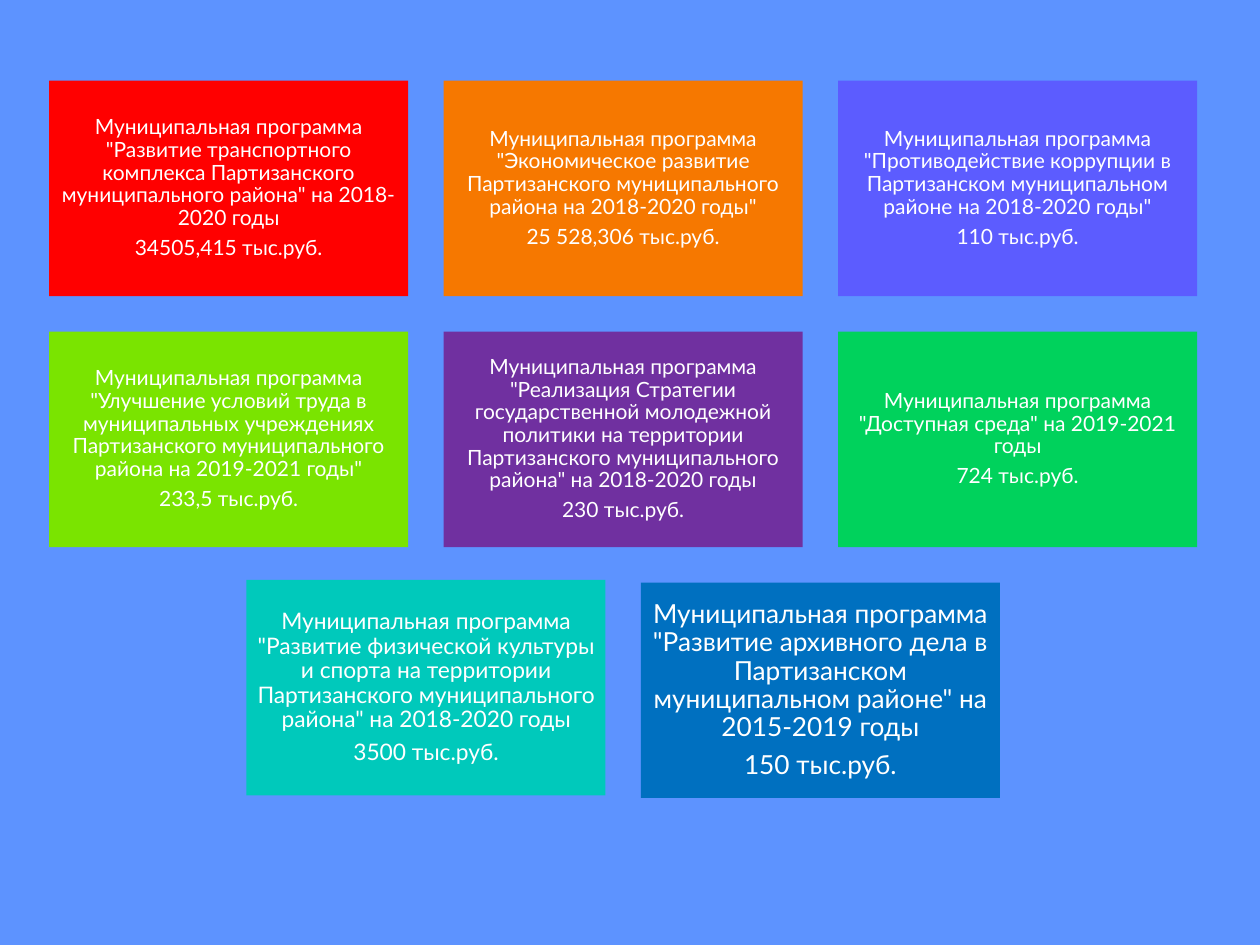
from pptx import Presentation
from pptx.dml.color import RGBColor
from pptx.enum.shapes import MSO_SHAPE
from pptx.enum.text import MSO_ANCHOR, PP_ALIGN
from pptx.util import Pt


def paint(fill, color):
    fill.solid()
    fill.fore_color.rgb = RGBColor.from_string(color)


WIDTH, HEIGHT = 205.2, 123.1
LEFT, TOP = 28.1, 46.1
STEP, DROP = 225.4, 143.4

cards = [
    ("FF0000", 12, '"Развитие транспортного комплекса Партизанского муниципального района" на 2018-2020 годы', "34505,415"),
    ("F67800", 12, '"Экономическое развитие Партизанского муниципального района на 2018-2020 годы"', "25 528,306"),
    ("5C5CFF", 12, '"Противодействие коррупции в Партизанском муниципальном районе на 2018-2020 годы"', "110"),
    ("7AE400", 12, '"Улучшение условий труда в муниципальных учреждениях Партизанского муниципального района на 2019-2021 годы"', "233,5"),
    ("7030A0", 12, '"Реализация Стратегии государственной молодежной политики на территории Партизанского муниципального района" на 2018-2020 годы', "230"),
    ("00D25C", 12, '"Доступная среда" на 2019-2021 годы', "724"),
    ("00C9BB", 13, '"Развитие физической культуры и спорта на территории Партизанского муниципального района" на 2018-2020 годы', "3500"),
    ("0070C0", 15, '"Развитие архивного дела в Партизанском муниципальном районе" на 2015-2019 годы', "150"),
]

deck = Presentation()
deck.slide_width, deck.slide_height = Pt(720), Pt(540)
slide = deck.slides.add_slide(deck.slide_layouts[6])
paint(slide.background.fill, "5D93FF")

for index, (color, size, name, sum_) in enumerate(cards):
    row, col = divmod(index, 3)
    left = LEFT + col * STEP + (STEP / 2 if row == 2 else 0)
    top = TOP + row * DROP - (1.5 if index == 6 else 0)
    card = slide.shapes.add_shape(
        MSO_SHAPE.RECTANGLE, Pt(left), Pt(top), Pt(WIDTH), Pt(HEIGHT))
    card.shadow.inherit = False
    card.line.fill.background()
    paint(card.fill, color)

    frame = card.text_frame
    frame.word_wrap = True
    frame.vertical_anchor = MSO_ANCHOR.MIDDLE
    inset = Pt(size * 0.3)
    frame.margin_left = frame.margin_right = inset
    frame.margin_top = frame.margin_bottom = inset
    frame.text = f"Муниципальная программа {name}\n{sum_} тыс.руб."
    for para in frame.paragraphs:
        para.alignment = PP_ALIGN.CENTER
        para.line_spacing = 0.9
        para.space_after = Pt(size * 0.35)
        for run in para.runs:
            run.font.name = "Lato"
            run.font.size = Pt(size)
            paint(run.font.fill, "FFFFFF")

deck.save("out.pptx")
